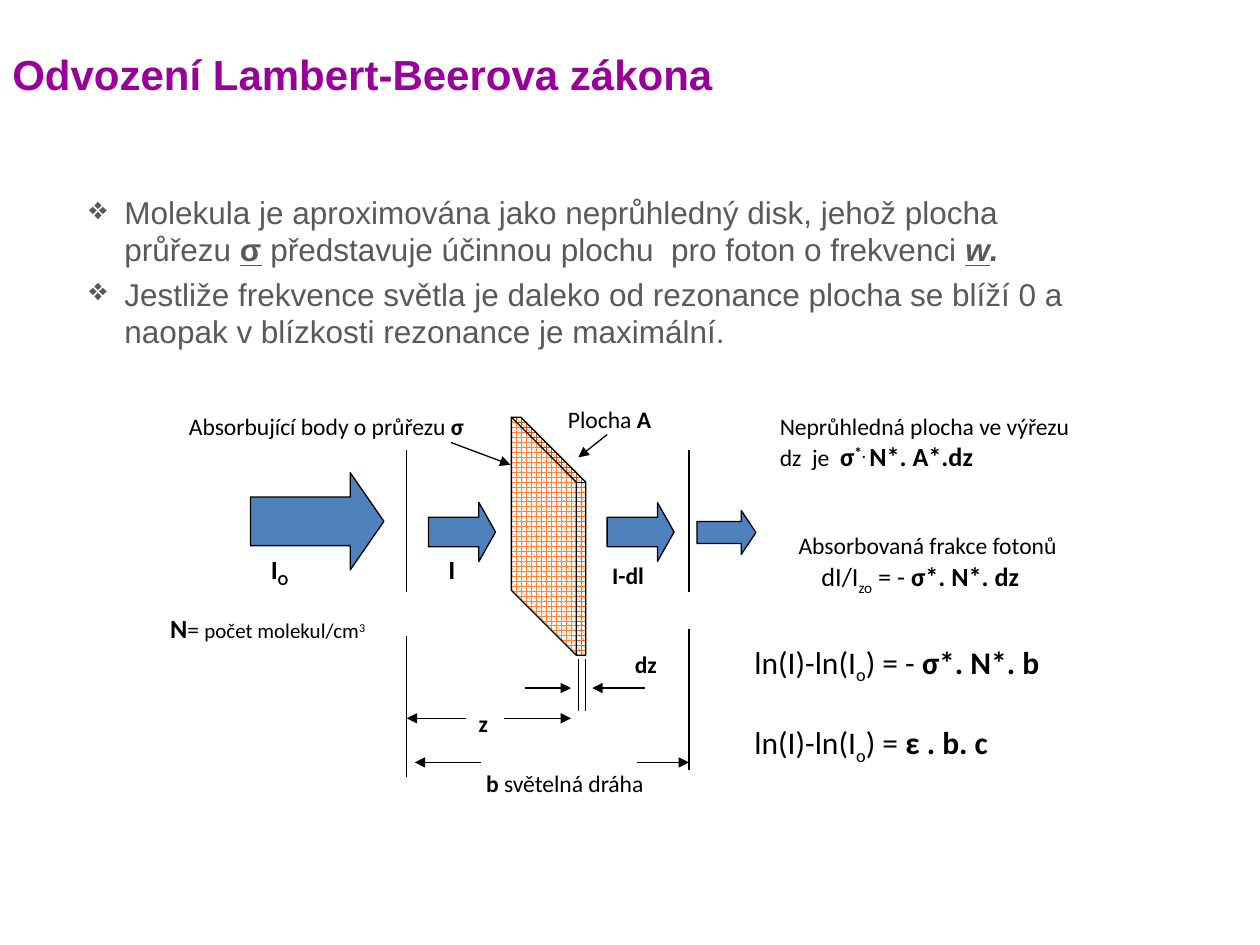
from lxml.etree import SubElement
from pptx import Presentation
from pptx.dml.color import RGBColor
from pptx.enum.dml import MSO_PATTERN
from pptx.enum.shapes import MSO_CONNECTOR, MSO_SHAPE
from pptx.enum.text import MSO_ANCHOR
from pptx.oxml.ns import qn
from pptx.util import Cm, Pt


def paint(target, color):
    target.rgb = RGBColor.from_string(color)


def write(para, runs, size, face, color):
    para.font.size = Pt(size)
    para.font.name = face
    paint(para.font.color, color)
    for text, style, *own in runs:
        run = para.add_run()
        run.text = text
        if "b" in style:
            run.font.bold = True
        if "i" in style:
            run.font.italic = True
        if "u" in style:
            run.font.underline = True
        if own:
            run.font.size = Pt(own[0])
        for mark, shift in (("-", "-25000"), ("+", "30000")):
            if mark in style:
                run.font._element.set("baseline", shift)


deck = Presentation()
deck.slide_width, deck.slide_height = Cm(25.4), Cm(19.05)
slide = deck.slides.add_slide(deck.slide_layouts[6])
shapes = slide.shapes

title = shapes.add_textbox(Cm(0), Cm(0.2), Cm(19.3), Cm(2.59)).text_frame
title.word_wrap = True
title.vertical_anchor = MSO_ANCHOR.MIDDLE
write(title.paragraphs[0], [("Odvození Lambert-Beerova zákona", "b")], 24, "Arial", "990099")

points = [
    [("Molekula je aproximována jako neprůhledný disk, jehož plocha průřezu ", ""),
     ("σ", "bu"), (" představuje účinnou plochu  pro foton o frekvenci ", ""),
     ("w", "biu"), (".", "bi")],
    [("Jestliže frekvence světla je daleko od rezonance plocha se blíží 0 a "
      "naopak v blízkosti rezonance je maximální.", "")],
]
body = shapes.add_textbox(Cm(1.55), Cm(3.76), Cm(20.83), Cm(9.96)).text_frame
body.word_wrap = True
for i, runs in enumerate(points):
    para = body.add_paragraph() if i else body.paragraphs[0]
    props = para._p.get_or_add_pPr()
    props.set("marL", str(Cm(0.71)))
    props.set("indent", str(-Cm(0.71)))
    SubElement(props, qn("a:buChar")).set("char", "❖")
    if i:
        para.space_before = Pt(3.6)
    write(para, runs, 18, "Arial", "595959")

cube = shapes.add_shape(MSO_SHAPE.CUBE, Cm(8.66), Cm(10.06), Cm(4.8), Cm(1.5))
cube.rotation = 270
cube.adjustments[0] = 0.873
cube.fill.patterned()
cube.fill.pattern = MSO_PATTERN.SPHERE
paint(cube.fill.fore_color, "FF6600")
paint(cube.fill.back_color, "FFFFFF")
solids = [cube]

beams = [
    (5.05, 9.53, 2.69, 1.96, 0.346),
    (8.64, 10.13, 1.35, 1.19, 0.282),
    (12.24, 10.13, 1.35, 1.19, 0.282),
    (14.05, 10.29, 1.19, 0.89, 0.334),
]
for left, top, width, height, head in beams:
    beam = shapes.add_shape(MSO_SHAPE.RIGHT_ARROW, Cm(left), Cm(top), Cm(width), Cm(height))
    beam.adjustments[1] = head
    beam.fill.solid()
    paint(beam.fill.fore_color, "4F81BD")
    solids.append(beam)
for solid in solids:
    solid.shadow.inherit = False
    paint(solid.line.color, "000000")
    solid.line.width = Pt(0.75)

walls = [
    (8.2, 9.07, 8.2, 11.94),
    (13.89, 12.67, 13.89, 15.52),
    (8.2, 12.83, 8.2, 15.67),
    (13.89, 9.07, 13.89, 11.94),
    (11.66, 13.28, 11.66, 14.33),
    (11.81, 13.28, 11.81, 14.33),
]
arrows = [
    (12.85, 15.37, 13.89, 15.37),
    (9.7, 15.37, 8.36, 15.37),
    (10.59, 13.87, 11.51, 13.87),
    (13, 13.87, 11.94, 13.87),
    (10.16, 14.48, 11.51, 14.48),
    (9.4, 14.48, 8.2, 14.48),
    (9.09, 8.92, 10.29, 9.37),
    (12.24, 8.76, 11.66, 9.22),
]
for ends in walls + arrows:
    line = shapes.add_connector(MSO_CONNECTOR.STRAIGHT, *map(Cm, ends))
    paint(line.line.color, "000000")
    line.line.width = Pt(0.75)
    if ends in arrows:
        SubElement(line.line._get_or_add_ln(), qn("a:tailEnd")).set("type", "triangle")
    SubElement(line._element.spPr, qn("a:effectLst"))

labels = [
    (11.2, 8.03, 3.3, 0.84, 13.5, [("Plocha ", ""), ("A", "b")]),
    (3.56, 8.18, 6.76, 0.84, 13.5, [("Absorbující body o průřezu ", ""), ("σ", "b")]),
    (9.55, 15.37, 3.76, 0.84, 13.5, [("b", "b"), (" světelná dráha", "")]),
    (9.4, 14.17, 0.76, 0.84, 13.5, [("z", "b")]),
    (12.55, 12.98, 1.04, 0.84, 13.5, [("dz", "b")]),
    (5.21, 11.02, 1.5, 0.89, 15, [("I", "b"), ("O", "b-")]),
    (8.79, 11.02, 0.61, 0.89, 15, [("I", "b")]),
    (12.09, 11.18, 1.19, 0.84, 13.5, [("I-dl", "b")]),
    (16.31, 11.18, 4.8, 0.89, 15,
     [("dI/I", ""), ("zo", "-"), (" = - ", ""), ("σ*. N*. dz", "b")]),
    (15.47, 8.18, 6.76, 1.47, 13.5,
     [("Neprůhledná plocha ve výřezu dz  je  ", ""), ("σ", "b", 15),
      ("*. ", "b+", 15), ("N*. A*.dz", "b", 15)]),
    (14.96, 12.83, 6.76, 1.02, 18,
     [("ln(I)-ln(I", ""), ("o", "-"), (") = - ", ""), ("σ*. N*. b", "b")]),
    (14.96, 14.45, 6.76, 1.02, 18,
     [("ln(I)-ln(I", ""), ("o", "-"), (") = ", ""), ("ε . b. c", "b")]),
    (15.85, 10.57, 6.38, 0.84, 13.5, [("Absorbovaná frakce fotonů", "")]),
    (3.18, 12.22, 6.76, 0.89, 12,
     [("N", "b", 15), ("= ", "", 13.5), ("počet molekul/cm", ""), ("3", "+")]),
]
for left, top, width, height, size, runs in labels:
    frame = shapes.add_textbox(Cm(left), Cm(top), Cm(width), Cm(height)).text_frame
    frame.word_wrap = True
    write(frame.paragraphs[0], runs, size, "Calibri", "000000")

deck.save("out.pptx")
